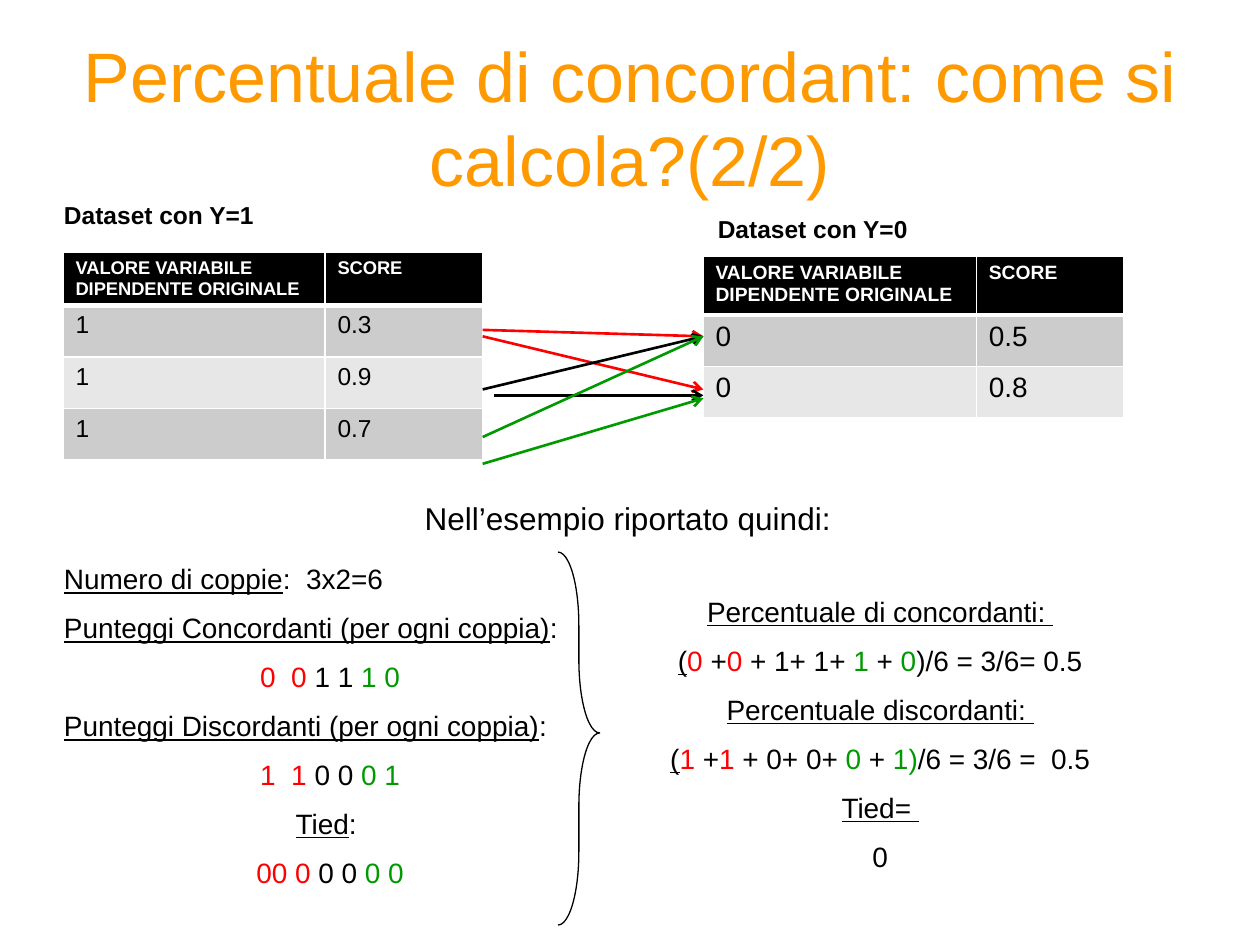
from pptx import Presentation
from pptx.dml.color import RGBColor
from pptx.enum.shapes import MSO_CONNECTOR, MSO_SHAPE
from pptx.enum.text import MSO_ANCHOR, MSO_AUTO_SIZE, PP_ALIGN
from pptx.oxml.ns import qn
from pptx.util import Cm, Pt
from lxml.etree import SubElement

ORANGE = RGBColor(0xFF, 0x99, 0x00)
BLACK = RGBColor(0, 0, 0)
WHITE = RGBColor(0xFF, 0xFF, 0xFF)
RED = RGBColor(0xFF, 0, 0)
GREEN = RGBColor(0, 0x99, 0)
DARK_BAND = RGBColor(0xCC, 0xCC, 0xCC)
LIGHT_BAND = RGBColor(0xE7, 0xE7, 0xE7)

LEFT, CENTER = PP_ALIGN.LEFT, PP_ALIGN.CENTER
HEADINGS = ["VALORE VARIABILE DIPENDENTE ORIGINALE", "SCORE"]


def apply(target, values):
    for attribute, value in values.items():
        setattr(target, attribute, value)


def add_run(paragraph, text, color=BLACK, **formats):
    run = paragraph.add_run()
    run.text = text
    apply(run.font, {"name": "Arial", **formats})
    run.font.color.rgb = color


def add_text(slide, box, paragraphs, size, frame_formats=None, **formats):
    frame = slide.shapes.add_textbox(*map(Cm, box)).text_frame
    apply(frame, {"word_wrap": True, "auto_size": MSO_AUTO_SIZE.SHAPE_TO_FIT_TEXT,
                  **(frame_formats or {})})
    for index, (alignment, pieces) in enumerate(paragraphs):
        paragraph = frame.paragraphs[0] if index == 0 else frame.add_paragraph()
        paragraph.alignment = alignment
        if index:
            paragraph.space_before = Pt(size * 0.55)
        for text, color, underline in pieces:
            add_run(paragraph, text, color, size=Pt(size), underline=underline, **formats)


def plain(text, color=BLACK):
    return text, color, False


def underlined(text):
    return text, BLACK, True


def add_title(slide, box):
    text = plain("Percentuale di concordant: come si calcola?(2/2)", ORANGE)
    add_text(slide, box, [(CENTER, [text])], 40,
             {"vertical_anchor": MSO_ANCHOR.MIDDLE, "auto_size": MSO_AUTO_SIZE.NONE})


def add_borders(cell, bottom_width):
    properties = cell._tc.get_or_add_tcPr()
    widths = {"a:lnL": 1, "a:lnR": 1, "a:lnT": 1, "a:lnB": bottom_width}
    for side, width in widths.items():
        border = SubElement(properties, qn(side), w=str(Pt(width)))
        SubElement(SubElement(border, qn("a:solidFill")), qn("a:srgbClr"), val=str(WHITE))


def add_dataset(slide, box, label, label_offset, column_widths, heading_size, body_size, rows):
    left, top, width, height = box
    label_left, label_top = label_offset
    records = [HEADINGS] + rows
    table = slide.shapes.add_table(len(records), 2, *map(Cm, box)).table
    for column, column_width in zip(table.columns, column_widths):
        column.width = Cm(column_width)
    for row_index, record in enumerate(records):
        heading = row_index == 0
        table.rows[row_index].height = Cm(height / len(records))
        band = BLACK if heading else DARK_BAND if row_index % 2 else LIGHT_BAND
        for column_index, value in enumerate(record):
            cell = table.cell(row_index, column_index)
            add_borders(cell, 3 if heading else 1)
            cell.fill.solid()
            cell.fill.fore_color.rgb = band
            add_run(cell.text_frame.paragraphs[0], value, WHITE if heading else BLACK,
                    size=Pt(heading_size if heading else body_size), bold=heading)
    add_text(slide, (left + label_left, top + label_top, 8.05, 0.86),
             [(LEFT, [plain(label)])], 14, bold=True)


def add_pair_arrows(slide, box):
    left, top, width, height = box
    pairs = [
        (RED, 0, 0, 0.13),
        (RED, 0, 0.13, 1.2),
        (BLACK, 0, 1.2, 0.13),
        (BLACK, 0.23, 1.32, 1.32),
        (GREEN, 0, 2.16, 0.13),
        (GREEN, 0, height, 1.38),
    ]
    for color, indent, start, end in pairs:
        arrow = slide.shapes.add_connector(
            MSO_CONNECTOR.STRAIGHT, Cm(left + indent), Cm(top + start),
            Cm(left + width), Cm(top + end))
        arrow.line.color.rgb = color
        arrow.line.width = Pt(1.5)
        properties = arrow.element.spPr
        SubElement(properties.find(qn("a:ln")), qn("a:tailEnd"), type="arrow")
        SubElement(properties, qn("a:effectLst"))


def score_line(red, black, green):
    return CENTER, [plain(red, RED), plain(black), plain(green, GREEN)]


def add_scores(slide, box):
    add_text(slide, box, [
        (LEFT, [underlined("Numero di coppie"), plain(":  3x2=6")]),
        (LEFT, [underlined("Punteggi Concordanti (per ogni coppia)"), plain(":")]),
        score_line("0  0 ", "1 1 ", "1 0"),
        (LEFT, [underlined("Punteggi Discordanti (per ogni coppia)"), plain(":")]),
        score_line("1  1 ", "0 0 ", "0 1"),
        (CENTER, [underlined("Tied"), plain(": ")]),
        score_line("00 0", " 0 0", " 0 0"),
    ], 16)


def percentage_line(red, black, green, last_green, result):
    return CENTER, [
        underlined("("), plain(f"{red} ", RED), plain("+"), plain(red, RED),
        plain(black), plain(green, GREEN), plain(" +"), plain(last_green, GREEN),
        plain(result),
    ]


def add_percentages(slide, box):
    add_text(slide, box, [
        (CENTER, [underlined("Percentuale di concordanti: ")]),
        percentage_line("0", " + 1+ 1+ ", "1", " 0", ")/6 = 3/6= 0.5"),
        (CENTER, [underlined("Percentuale discordanti: ")]),
        percentage_line("1", " + 0+ 0+ ", "0", " 1)", "/6 = 3/6 =  0.5"),
        (CENTER, [underlined("Tied= ")]),
        (CENTER, [plain("0")]),
    ], 16)


def add_brace(slide, box):
    brace = slide.shapes.add_shape(MSO_SHAPE.RIGHT_BRACE, *map(Cm, box))
    brace.shadow.inherit = False
    brace.fill.background()
    brace.line.color.rgb = BLACK
    brace.line.width = Pt(0.75)
    brace.adjustments[0] = 1.76
    brace.adjustments[1] = 0.485


def add_example_heading(slide, box):
    add_text(slide, box, [(LEFT, [plain("Nell’esempio riportato quindi:")])], 18,
             {"word_wrap": False})


def main():
    presentation = Presentation()
    apply(presentation, {"slide_width": Cm(25.4), "slide_height": Cm(19.05)})
    slide = presentation.slides.add_slide(presentation.slide_layouts[6])
    add_title(slide, (1.27, 0.76, 22.86, 3.18))
    add_dataset(slide, (1.27, 5.08, 8.46, 4.16), "Dataset con Y=1", (-0.23, -1.17),
                (5.28, 3.18), 10.5, 14, [["1", "0.3"], ["1", "0.9"], ["1", "0.7"]])
    add_dataset(slide, (14.17, 5.16, 8.48, 3.12), "Dataset con Y=0", (0.05, -0.97),
                (5.51, 2.97), 11, 16, [["0", "0.5"], ["0", "0.8"]])
    add_pair_arrows(slide, (9.73, 6.65, 4.45, 2.7))
    add_scores(slide, (1.04, 11.2, 11.23, 8.89))
    add_percentages(slide, (11, 11.86, 13.49, 6.07))
    add_brace(slide, (11.25, 11.13, 0.84, 7.52))
    add_example_heading(slide, (8.31, 9.93, 8.79, 1.02))
    presentation.save("out.pptx")


if __name__ == "__main__":
    main()
